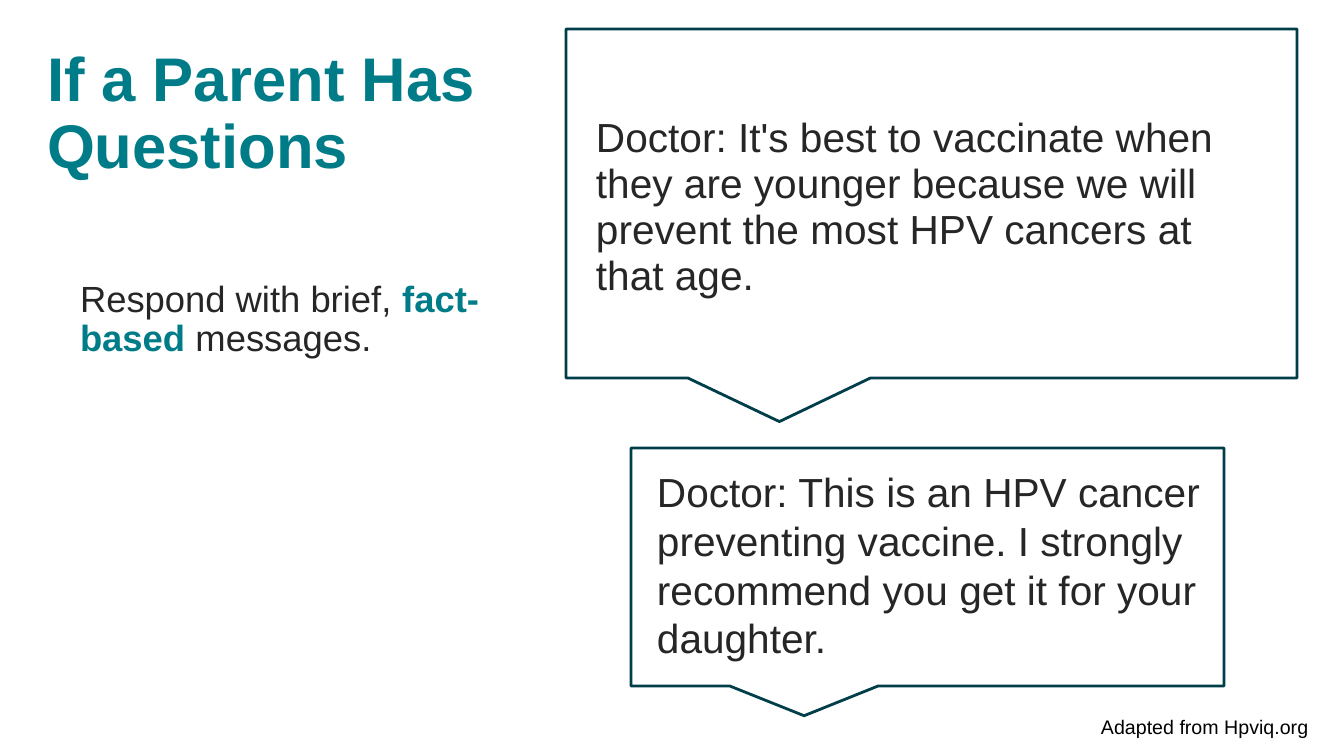
import pptx
import pptx.util
import pptx.dml.color
import pptx.enum.shapes
import pptx.enum.text
import pptx.oxml.ns
import lxml.etree
from dataclasses import dataclass

ANCHOR = pptx.enum.text.MSO_ANCHOR
FIT = pptx.enum.text.MSO_AUTO_SIZE
PX = 914400 / 100.8


@dataclass(frozen=True)
class Theme:
    font: str = "Arial"
    teal: str = "007C88"
    outline: str = "003E4A"
    ink: str = "262626"
    black: str = "000000"
    title_size: int = 44
    speech_size: int = 29
    body_size: int = 26
    source_size: int = 14


class SlideBuilder:
    """Builds one slide in the given theme, with lengths in px."""

    def __init__(self, deck, theme):
        self.theme = theme
        self.slide = deck.slides.add_slide(deck.slide_layouts[1])

    def place(self, element, box):
        for side, length in zip(("left", "top", "width", "height"), box):
            setattr(element, side, round(length * PX))

    def fill_text(self, frame, runs, size, insets=(13, 7), anchor=ANCHOR.TOP,
                  fit=FIT.NONE, spacing=None, indent=None):
        across, down = (round(inset * PX) for inset in insets)
        frame_format = {"word_wrap": True, "auto_size": fit, "vertical_anchor": anchor,
                        "margin_left": across, "margin_right": across,
                        "margin_top": down, "margin_bottom": down}
        for key, value in frame_format.items():
            setattr(frame, key, value)
        paragraph = frame.paragraphs[0]
        if indent is not None:
            properties = paragraph._p.get_or_add_pPr()
            properties.set("marL", str(round(indent * PX)))
            properties.set("indent", "0")
            lxml.etree.SubElement(properties, pptx.oxml.ns.qn("a:buNone"))
        paragraph_format = {"alignment": pptx.enum.text.PP_ALIGN.LEFT,
                            "line_spacing": spacing,
                            "space_before": pptx.util.Pt(0)}
        for key, value in paragraph_format.items():
            setattr(paragraph, key, value)
        for words, color, bold in runs:
            run = paragraph.add_run()
            run.text = words
            run_format = {"name": self.theme.font, "size": pptx.util.Pt(size), "bold": bold}
            for key, value in run_format.items():
                setattr(run.font, key, value)
            run.font.color.rgb = pptx.dml.color.RGBColor.from_string(color)

    def title(self, words, box):
        heading = self.slide.shapes.title
        self.place(heading, box)
        self.fill_text(heading.text_frame, [(words, self.theme.teal, True)],
                       self.theme.title_size, anchor=ANCHOR.MIDDLE, spacing=0.9)

    def body(self, runs, box):
        advice = self.slide.placeholders[1]
        self.place(advice, box)
        self.fill_text(advice.text_frame, runs, self.theme.body_size, spacing=0.9, indent=17)

    def text(self, words, box, size, color, **layout):
        passage = self.slide.shapes.add_textbox(0, 0, 0, 0)
        self.place(passage, box)
        self.fill_text(passage.text_frame, [(words, color, False)], size,
                       fit=FIT.SHAPE_TO_FIT_TEXT, **layout)

    def speech(self, words, box, spacing=None):
        self.text(words, box, self.theme.speech_size, self.theme.ink,
                  insets=(0, 0), spacing=spacing)

    def bubble(self, box):
        callout = self.slide.shapes.add_shape(
            pptx.enum.shapes.MSO_SHAPE.ROUNDED_RECTANGULAR_CALLOUT, 0, 0, 0, 0)
        self.place(callout, box)
        for index, value in enumerate((-0.208, 0.625, 0)):
            callout.adjustments[index] = value
        callout.shadow.inherit = False
        callout.fill.background()
        callout.line.color.rgb = pptx.dml.color.RGBColor.from_string(self.theme.outline)
        callout.line.width = pptx.util.Pt(2)


def main():
    deck = pptx.Presentation()
    deck.slide_width = round(1344 * PX)
    deck.slide_height = round(756 * PX)
    theme = Theme()
    page = SlideBuilder(deck, theme)
    page.title("If a Parent Has Questions", (34, 42, 476, 146))
    page.body([("Respond with brief, ", theme.ink, False),
               ("fact-based ", theme.teal, True),
               ("messages.", theme.ink, False)], (50, 274, 476, 112))
    page.bubble((566, 29, 731, 349))
    page.speech("Doctor: It's best to vaccinate when they are younger because we will "
                "prevent the most HPV cancers at that age.", (596, 115, 673, 186), 0.95)
    page.bubble((631, 448, 593, 238))
    page.speech("Doctor: This is an HPV cancer preventing vaccine. I strongly recommend "
                "you get it for your daughter.", (657, 467, 551, 199))
    page.text("Adapted from Hpviq.org", (1088, 708, 254, 37), theme.source_size, theme.black)
    deck.save("out.pptx")


if __name__ == "__main__":
    main()
